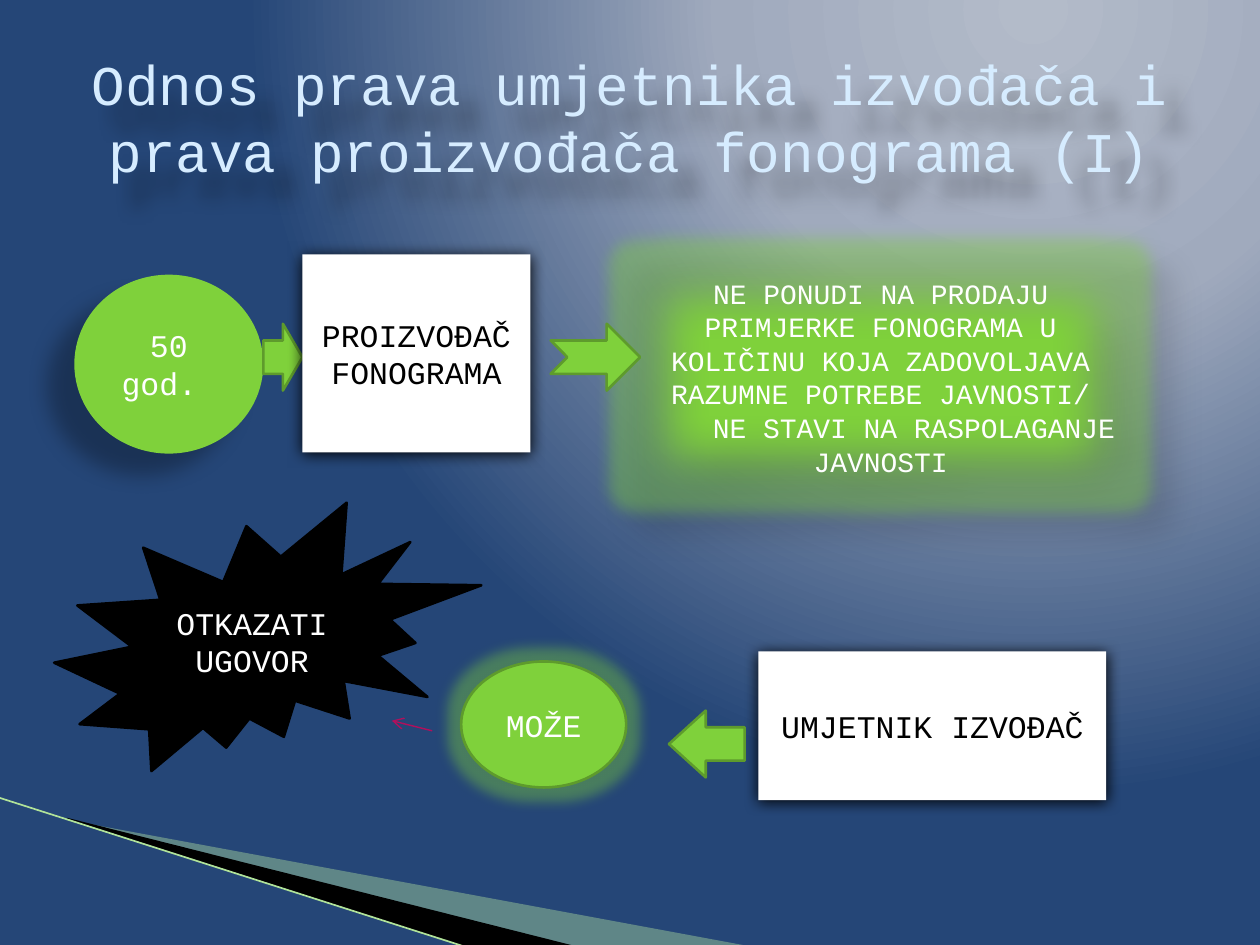
from lxml.etree import SubElement
from pptx import Presentation
from pptx.dml.color import RGBColor
from pptx.enum.shapes import MSO_CONNECTOR, MSO_SHAPE
from pptx.enum.text import MSO_ANCHOR, PP_ALIGN
from pptx.oxml import parse_xml
from pptx.oxml.ns import nsdecls, qn
from pptx.util import Emu, Pt

PX = 9144  # EMU per px: 100 px to the inch
FONT = "Courier New"
WHITE = RGBColor(0xFF, 0xFF, 0xFF)
BLACK = RGBColor(0, 0, 0)
GREEN = RGBColor(0x7F, 0xD1, 0x3B)
DARK_GREEN = RGBColor(0x5E, 0x9B, 0x2C)
PALE_GREEN = RGBColor(0xB8, 0xE7, 0xA1)
LINE_GREEN = RGBColor(0xB1, 0xE3, 0x99)
TITLE_BLUE = RGBColor(0xD6, 0xEC, 0xFF)
MAGENTA = RGBColor(0xB0, 0x10, 0x5C)
BACKGROUND = ((0, RGBColor(0xB3, 0xBB, 0xC9)),
              (40, RGBColor(0xA0, 0xAA, 0xBD)),
              (100, RGBColor(0x25, 0x46, 0x77)))


def px(*lengths):
    return [Emu(length * PX) for length in lengths]


def color_xml(color, alpha):
    return f'<a:srgbClr val="{color}"><a:alpha val="{alpha * 1000}"/></a:srgbClr>'


def shadow(alpha, blur, distance, angle):
    return (f'<a:outerShdw blurRad="{Pt(blur)}" dist="{Pt(distance)}" '
            f'dir="{angle * 60000}" algn="ctr" rotWithShape="0">'
            f'{color_xml(BLACK, alpha)}</a:outerShdw>')


def glow(radius):
    return f'<a:glow rad="{Pt(radius)}">{color_xml(GREEN, 40)}</a:glow>'


def soft_edge(radius):
    return f'<a:softEdge rad="{Pt(radius)}"/>'


class SlideBuilder:
    def __init__(self, slide):
        self.slide = slide

    def background(self, stops):
        """Circular gradient centred near the top right."""
        self.slide.background.fill.gradient()
        gradient = self.slide.element.find(".//" + qn("a:gradFill"))
        stop_xml = "".join(f'<a:gs pos="{position * 1000}"><a:srgbClr val="{color}"/></a:gs>'
                           for position, color in stops)
        gradient.getparent().replace(gradient, parse_xml(
            f'<a:gradFill {nsdecls("a")} rotWithShape="1"><a:gsLst>{stop_xml}</a:gsLst>'
            '<a:path path="circle"><a:fillToRect l="65000" b="98000"/></a:path></a:gradFill>'))

    def effects(self, shape, *parts):
        properties = shape._element.spPr
        for old in properties.findall(qn("a:effectLst")):
            properties.remove(old)
        properties.append(parse_xml(
            f'<a:effectLst {nsdecls("a")}>{"".join(parts)}</a:effectLst>'))

    def set_text(self, shape, lines, size, color, indent=0):
        """Centred paragraphs; indent shifts the first line of later ones."""
        frame = shape.text_frame
        frame.word_wrap = True
        frame.vertical_anchor = MSO_ANCHOR.MIDDLE
        frame.text = "\n".join(lines)
        for number, paragraph in enumerate(frame.paragraphs):
            paragraph.alignment = PP_ALIGN.CENTER
            if number and indent:
                properties = paragraph._p.get_or_add_pPr()
                properties.set("marL", "0")
                properties.set("indent", str(indent * PX))
            paragraph.font.name = FONT
            paragraph.font.size = Pt(size)
            paragraph.font.color.rgb = color

    def title(self, box, text):
        shape = self.slide.shapes.add_textbox(*px(*box))
        self.set_text(shape, [text], 32, TITLE_BLUE)
        self.effects(shape, shadow(35, 10, 18, 50))

    def shape(self, kind, box, fill=GREEN, line=None, lines=(), size=18,
              color=WHITE, indent=0, adjustments=(), effects=()):
        shape = self.slide.shapes.add_shape(kind, *px(*box))
        shape.shadow.inherit = False
        for number, value in enumerate(adjustments):
            shape.adjustments[number] = value
        shape.fill.solid()
        shape.fill.fore_color.rgb = fill
        if line is None:
            shape.line.fill.background()
        else:
            shape.line.color.rgb = line
            shape.line.width = Pt(1.5)
        if effects:
            self.effects(shape, *effects)
        if lines:
            self.set_text(shape, lines, size, color, indent)

    def polygon(self, points, fill, alpha=100):
        builder = self.slide.shapes.build_freeform(*points[0], scale=PX)
        builder.add_line_segments(points[1:], close=True)
        shape = builder.convert_to_shape()
        shape.shadow.inherit = False
        shape.line.fill.background()
        shape.fill.solid()
        shape.fill.fore_color.rgb = fill
        if alpha < 100:
            color = shape._element.spPr.find(qn("a:solidFill"))[0]
            SubElement(color, qn("a:alpha"), val=str(alpha * 1000))

    def line(self, start, end, color, width, arrow=False):
        connector = self.slide.shapes.add_connector(
            MSO_CONNECTOR.STRAIGHT, *px(*start, *end))
        connector.line.color.rgb = color
        connector.line.width = Pt(width)
        if arrow:
            outline = connector._element.spPr.find(qn("a:ln"))
            SubElement(outline, qn("a:tailEnd"), type="arrow")
        self.effects(connector)


def main():
    presentation = Presentation()
    presentation.slide_width, presentation.slide_height = px(1000, 750)
    builder = SlideBuilder(presentation.slides.add_slide(presentation.slide_layouts[6]))
    builder.background(BACKGROUND)

    builder.polygon([(55, 651), (595, 751), (456, 751), (55, 650)], PALE_GREEN, 40)
    builder.polygon([(53, 649), (457, 751), (372, 752), (54, 650)], BLACK)
    builder.line((-1, 633), (371, 752), LINE_GREEN, 0.95)

    builder.title((50, 30, 900, 125),
                  "Odnos prava umjetnika izvođača i prava proizvođača fonograma (I)")

    card_shadow = shadow(100, 8.5, 1, 90)
    builder.shape(MSO_SHAPE.OVAL, (59, 218, 150, 142), lines=["50 god. "],
                  effects=[shadow(28, 11.8, 19.7, 141)])
    builder.shape(MSO_SHAPE.RIGHT_ARROW, (209, 257, 31, 53), line=DARK_GREEN)
    builder.shape(MSO_SHAPE.RECTANGLE, (240, 202, 181, 157), WHITE,
                  lines=["PROIZVOĐAČ", "FONOGRAMA"], color=BLACK, effects=[card_shadow])
    builder.shape(MSO_SHAPE.DOWN_ARROW_CALLOUT, (496, 202, 406, 299),
                  lines=["NE PONUDI NA PRODAJU PRIMJERKE FONOGRAMA U KOLIČINU KOJA "
                         "ZADOVOLJAVA RAZUMNE POTREBE JAVNOSTI/",
                         "NE STAVI NA RASPOLAGANJE JAVNOSTI"],
                  size=16, indent=53, adjustments=(0.1, 0.13, 0.25, 0.65),
                  effects=[glow(18), shadow(30, 15, 18, 45), soft_edge(25)])
    builder.shape(MSO_SHAPE.NOTCHED_RIGHT_ARROW, (437, 257, 71, 53), line=DARK_GREEN)

    builder.shape(MSO_SHAPE.RECTANGLE, (602, 517, 276, 118), WHITE,
                  lines=["UMJETNIK IZVOĐAČ"], color=BLACK, effects=[card_shadow])
    builder.shape(MSO_SHAPE.LEFT_ARROW, (531, 564, 60, 53), line=DARK_GREEN,
                  adjustments=(0.5, 0.55))
    builder.shape(MSO_SHAPE.EXPLOSION2, (43, 399, 339, 213), BLACK, BLACK,
                  lines=["OTKAZATI UGOVOR"])
    builder.shape(MSO_SHAPE.OVAL, (366, 525, 131, 100), line=DARK_GREEN,
                  lines=["MOŽE"], effects=[glow(14)])
    builder.line((343, 580), (311, 572), MAGENTA, 0.79, arrow=True)

    presentation.save("out.pptx")


if __name__ == "__main__":
    main()
